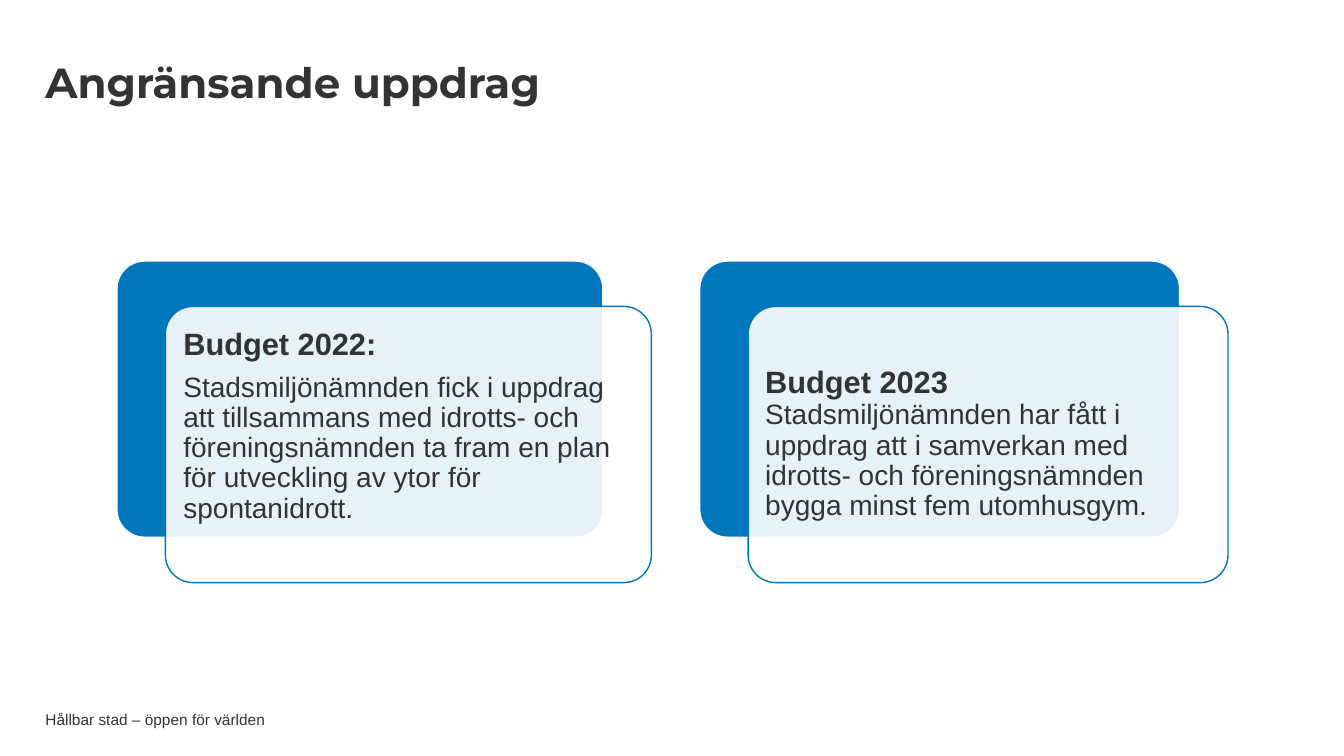
"""Build the slide on related assignments with two budget cards."""
from lxml import etree
from pptx import Presentation
from pptx import util as u
from pptx.dml.color import RGBColor
from pptx.enum import shapes, text
from pptx.oxml.ns import qn

TITLE = "Angränsande uppdrag"
FOOTER = "Hållbar stad – öppen för världen"
CARDS = [
    {"heading": "Budget 2022:",
     "body": "Stadsmiljönämnden fick i uppdrag att tillsammans med idrotts- och "
             "föreningsnämnden ta fram en plan för utveckling av ytor för spontanidrott.",
     "left": 1.16, "width": 4.82, "inset": 0.1, "top_inset": 0.14, "gap": 8,
     "anchor": text.MSO_ANCHOR.TOP},
    {"heading": "Budget 2023",
     "body": "Stadsmiljönämnden har fått i uppdrag att i samverkan med idrotts- och "
             "föreningsnämnden bygga minst fem utomhusgym.",
     "left": 6.94, "width": 4.76, "inset": 0.09, "top_inset": 0.09, "gap": 0,
     "anchor": text.MSO_ANCHOR.MIDDLE},
]
CARD_TOP, CARD_HEIGHT = 2.59, 2.74
SHIFT_X, SHIFT_Y = 0.48, 0.45
BLUE, WHITE, DARK = "0077BC", "FFFFFF", "333333"


def color(value):
    return RGBColor.from_string(value)


def set_frame(frame, anchor, left, top, right, bottom):
    frame.word_wrap = True
    frame.auto_size = text.MSO_AUTO_SIZE.NONE
    frame.vertical_anchor = anchor
    frame.margin_left, frame.margin_top = u.Inches(left), u.Inches(top)
    frame.margin_right, frame.margin_bottom = u.Inches(right), u.Inches(bottom)


def write(paragraph, words, size, bold=False, font="Arial", spacing=0.9):
    paragraph.text = words
    paragraph.alignment = text.PP_ALIGN.LEFT
    paragraph.line_spacing = spacing
    for run in paragraph.runs:
        run.font.name, run.font.size, run.font.bold = font, u.Pt(size), bold
        run.font.color.rgb = color(DARK)


def add_panel(slide, left, top, width, fill, line):
    panel = slide.shapes.add_shape(
        shapes.MSO_SHAPE.ROUNDED_RECTANGLE, u.Inches(left), u.Inches(top),
        u.Inches(width), u.Inches(CARD_HEIGHT))
    panel.adjustments[0] = 0.1
    panel.shadow.inherit = False
    panel.fill.solid()
    panel.fill.fore_color.rgb = color(fill)
    panel.line.color.rgb = color(line)
    panel.line.width = u.Pt(1)
    return panel


def add_card(slide, card):
    left, width = card["left"], card["width"]
    add_panel(slide, left, CARD_TOP, width, BLUE, WHITE)
    front = add_panel(slide, left + SHIFT_X, CARD_TOP + SHIFT_Y, width, WHITE, BLUE)
    fill_color = front.fill._xPr.find(qn("a:solidFill"))[0]
    etree.SubElement(fill_color, qn("a:alpha")).set("val", "90000")
    frame, inset = front.text_frame, card["inset"]
    set_frame(frame, card["anchor"], inset, card["top_inset"], inset, inset)
    heading = frame.paragraphs[0]
    write(heading, card["heading"], 22, bold=True)
    heading.space_after = u.Pt(card["gap"])
    write(frame.add_paragraph(), card["body"], 20)


def main():
    deck = Presentation()
    deck.slide_width, deck.slide_height = u.Inches(13.33), u.Inches(7.5)
    slide = deck.slides.add_slide(deck.slide_layouts[5])

    title = slide.shapes.title
    title.left, title.top = u.Inches(0.45), u.Inches(0.44)
    title.width, title.height = u.Inches(10.03), u.Inches(0.81)
    set_frame(title.text_frame, text.MSO_ANCHOR.MIDDLE, 0, 0.05, 0, 0.05)
    write(title.text_frame.paragraphs[0], TITLE, 30, bold=True, font="Montserrat")

    for card in CARDS:
        add_card(slide, card)

    footer = slide.shapes.add_textbox(
        u.Inches(0.45), u.Inches(7.06), u.Inches(9.45), u.Inches(0.16))
    set_frame(footer.text_frame, text.MSO_ANCHOR.MIDDLE, 0, 0, 0, 0)
    write(footer.text_frame.paragraphs[0], FOOTER, 11, spacing=1.0)

    deck.save("out.pptx")


if __name__ == "__main__":
    main()
